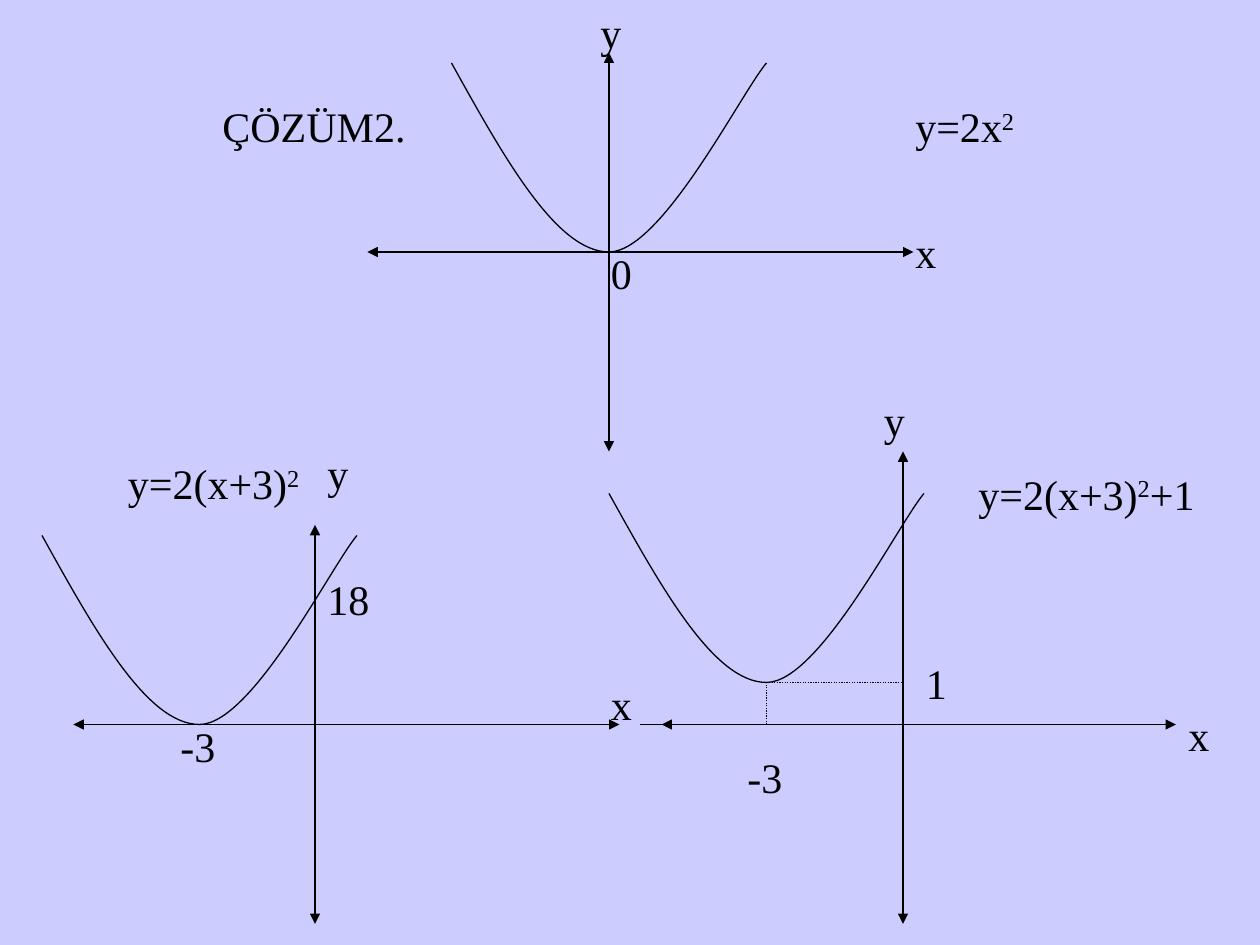
from dataclasses import dataclass

from lxml import etree
from pptx import Presentation
from pptx.dml.color import RGBColor
from pptx.enum.dml import MSO_LINE
from pptx.enum.shapes import MSO_CONNECTOR
from pptx.enum.text import MSO_AUTO_SIZE
from pptx.oxml.ns import qn
from pptx.util import Pt

STRAIGHT = MSO_CONNECTOR.STRAIGHT
DOTTED = MSO_LINE.ROUND_DOT
FIT_SHAPE = MSO_AUTO_SIZE.SHAPE_TO_FIT_TEXT


@dataclass(frozen=True)
class Theme:
    background: RGBColor = RGBColor(0xCC, 0xCC, 0xFF)
    ink: RGBColor = RGBColor(0, 0, 0)
    font: str = "Times New Roman"
    text_size: float = 24
    line_width: float = 0.75


class Board:
    """Style and current slide; all lengths are in points."""

    # Two Bezier segments, relative to the vertex of the parabola
    PARABOLA = [(-90, -108), (-60, -54), (-30, 0), (0, 0),
                (30, 0), (75, -90), (90, -108)]

    def __init__(self, slide, theme):
        self.s = slide
        self.theme = theme
        fill = slide.background.fill
        fill.solid()
        fill.fore_color.rgb = theme.background

    def style_line(self, line):
        line.color.rgb = self.theme.ink
        line.width = Pt(self.theme.line_width)

    def line(self, x1, y1, x2, y2, arrow=False, dash=None):
        sp = self.s.shapes.add_connector(STRAIGHT, Pt(x1), Pt(y1), Pt(x2), Pt(y2))
        self.style_line(sp.line)
        if dash:
            sp.line.dash_style = dash
        if arrow:
            etree.SubElement(sp.line._get_or_add_ln(), qn("a:tailEnd"), type="triangle")
        etree.SubElement(sp._element.spPr, qn("a:effectLst"))

    def axes(self, x, y, x_ends, y_ends):
        """Each axis: a long arrow (start, end) and a short one back (start, end)."""
        for start, end in y_ends:
            self.line(x, start, x, end, arrow=True)
        for start, end in x_ends:
            self.line(start, y, end, y, arrow=True)

    def parabola(self, x, y):
        points = [(Pt(x + dx), Pt(y + dy)) for dx, dy in self.PARABOLA]
        builder = self.s.shapes.build_freeform(*points[0])
        builder.add_line_segments(points[1:], close=False)
        sp = builder.convert_to_shape()
        sp.shadow.inherit = False
        sp.fill.background()
        self.style_line(sp.line)
        # Every three straight segments become one Bezier segment
        path = next(sp._element.iter(qn("a:path")))
        segments = path.findall(qn("a:lnTo"))
        for i in range(0, len(segments), 3):
            curve = etree.SubElement(path, qn("a:cubicBezTo"))
            for segment in segments[i:i + 3]:
                curve.append(segment[0])
                path.remove(segment)

    def label(self, x, y, w, *parts, h=36, wrap=True):
        """Text parts alternate between normal and superscript."""
        tf = self.s.shapes.add_textbox(Pt(x), Pt(y), Pt(w), Pt(h)).text_frame
        tf.word_wrap = wrap
        tf.auto_size = FIT_SHAPE
        p = tf.paragraphs[0]
        for i, part in enumerate(parts):
            r = p.add_run()
            r.text = part
            r.font.name = self.theme.font
            r.font.size = Pt(self.theme.text_size)
            r.font.color.rgb = self.theme.ink
            if i % 2:
                r.font._element.set("baseline", "30000")


def main():
    prs = Presentation()
    prs.slide_width, prs.slide_height = Pt(720), Pt(540)
    board = Board(prs.slides.add_slide(prs.slide_layouts[6]), Theme())

    # Top graph: y = 2x²
    board.label(120, 54, 492, "ÇÖZÜM2.")
    board.axes(348, 144, [(216, 522), (240, 210)], [(42, 258), (60, 30)])
    board.parabola(348, 144)
    board.label(516, 54, 114, "y=2x", "2")
    board.label(342, 138, 36, "0")
    board.label(516, 126, 30, "x")
    board.label(336, 0, 42, "y")

    # Lower left graph: y = 2(x+3)²
    board.axes(180, 414, [(48, 354), (72, 42)], [(312, 528), (330, 300)])
    board.parabola(114, 414)
    board.label(66, 258, 126, "y=2(x+3)", "2")
    board.label(342, 384, 48, "x")
    board.label(180, 252, 36, "y", h=65)
    board.label(96, 408, 54, "-3")
    board.label(180, 324, 54, "18")

    # Lower right graph: y = 2(x+3)² + 1
    board.axes(516, 414, [(366, 672), (408, 378)], [(282, 528), (330, 258)])
    board.parabola(438, 390)
    board.label(552, 264, 192, "y=2(x+3)", "2", "+1", h=79)
    board.label(672, 402, 27, "x", wrap=False)
    board.label(498, 222, 48, "y", h=79)
    board.label(420, 426, 66, "-3")
    board.label(522, 372, 42, "1")

    # Dotted guides from the vertex to the axes
    board.line(438, 414, 438, 390, dash=DOTTED)
    board.line(438, 390, 516, 390, dash=DOTTED)

    prs.save("out.pptx")


if __name__ == "__main__":
    main()
